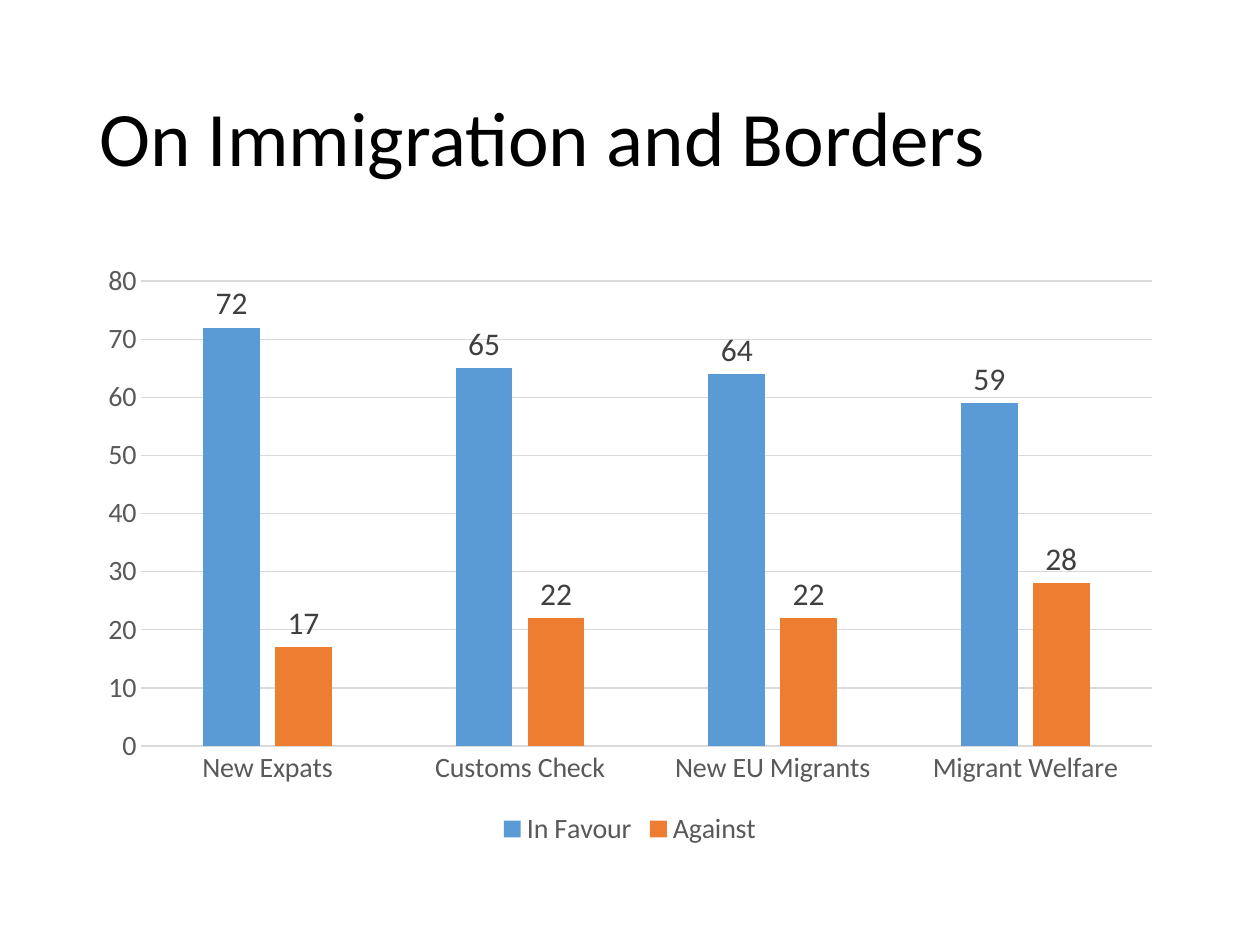
"""Build a slide charting opinions on immigration and borders."""
from pptx import Presentation
from pptx.chart.data import CategoryChartData
from pptx.dml.color import RGBColor
from pptx.enum import chart as ch, text
from pptx.util import Pt

BLACK = RGBColor(0x00, 0x00, 0x00)
LABEL_GREY = RGBColor(0x40, 0x40, 0x40)
AXIS_GREY = RGBColor(0x59, 0x59, 0x59)
GRID_GREY = RGBColor(0xD9, 0xD9, 0xD9)
BLUE = RGBColor(0x5B, 0x9B, 0xD5)
ORANGE = RGBColor(0xED, 0x7D, 0x31)
LEFT, WIDTH = Pt(49.5), Pt(621)


def style_font(font, size, color):
    font.name = "Calibri"
    font.size = Pt(size)
    font.bold = False
    font.color.rgb = color


def style_line(line):
    line.color.rgb = GRID_GREY
    line.width = Pt(0.75)


deck = Presentation()
deck.slide_width, deck.slide_height = Pt(720), Pt(540)
slide = deck.slides.add_slide(deck.slide_layouts[5])

title = slide.shapes.title
title.left, title.top, title.width, title.height = LEFT, Pt(28.75), WIDTH, Pt(104.4)
title.text_frame.text = "On Immigration and Borders"
title.text_frame.vertical_anchor = text.MSO_ANCHOR.MIDDLE
heading = title.text_frame.paragraphs[0]
heading.alignment = text.PP_ALIGN.LEFT
heading.line_spacing = 0.9
style_font(heading.font, 44, BLACK)

opinions = CategoryChartData(number_format="General")
opinions.categories = ["New Expats", "Customs Check", "New EU Migrants", "Migrant Welfare"]
opinions.add_series("In Favour", [72, 65, 64, 59])
opinions.add_series("Against", [17, 22, 22, 28])
chart = slide.shapes.add_chart(
    ch.XL_CHART_TYPE.COLUMN_CLUSTERED, LEFT, Pt(144), WIDTH, Pt(342.7), opinions
).chart
style_font(chart.font, 10, BLACK)
chart.has_title = False

chart.has_legend = True
chart.legend.position = ch.XL_LEGEND_POSITION.BOTTOM
chart.legend.include_in_layout = False
style_font(chart.legend.font, 16, AXIS_GREY)

topics, scores = chart.category_axis, chart.value_axis
for axis in (topics, scores):
    axis.major_tick_mark = axis.minor_tick_mark = ch.XL_TICK_MARK.NONE
    style_font(axis.tick_labels.font, 16, AXIS_GREY)
style_line(topics.format.line)
scores.format.line.fill.background()
scores.minimum_scale, scores.maximum_scale, scores.major_unit = 0, 80, 10
scores.has_major_gridlines = True
style_line(scores.major_gridlines.format.line)

columns = chart.plots[0]
columns.gap_width = 219
columns.overlap = -27
columns.vary_by_categories = False
for answer, color in zip(columns.series, (BLUE, ORANGE)):
    answer.invert_if_negative = False
    answer.format.fill.solid()
    answer.format.fill.fore_color.rgb = color
    answer.data_labels.show_value = True
    answer.data_labels.position = ch.XL_LABEL_POSITION.OUTSIDE_END
    style_font(answer.data_labels.font, 18, LABEL_GREY)

deck.save("out.pptx")
